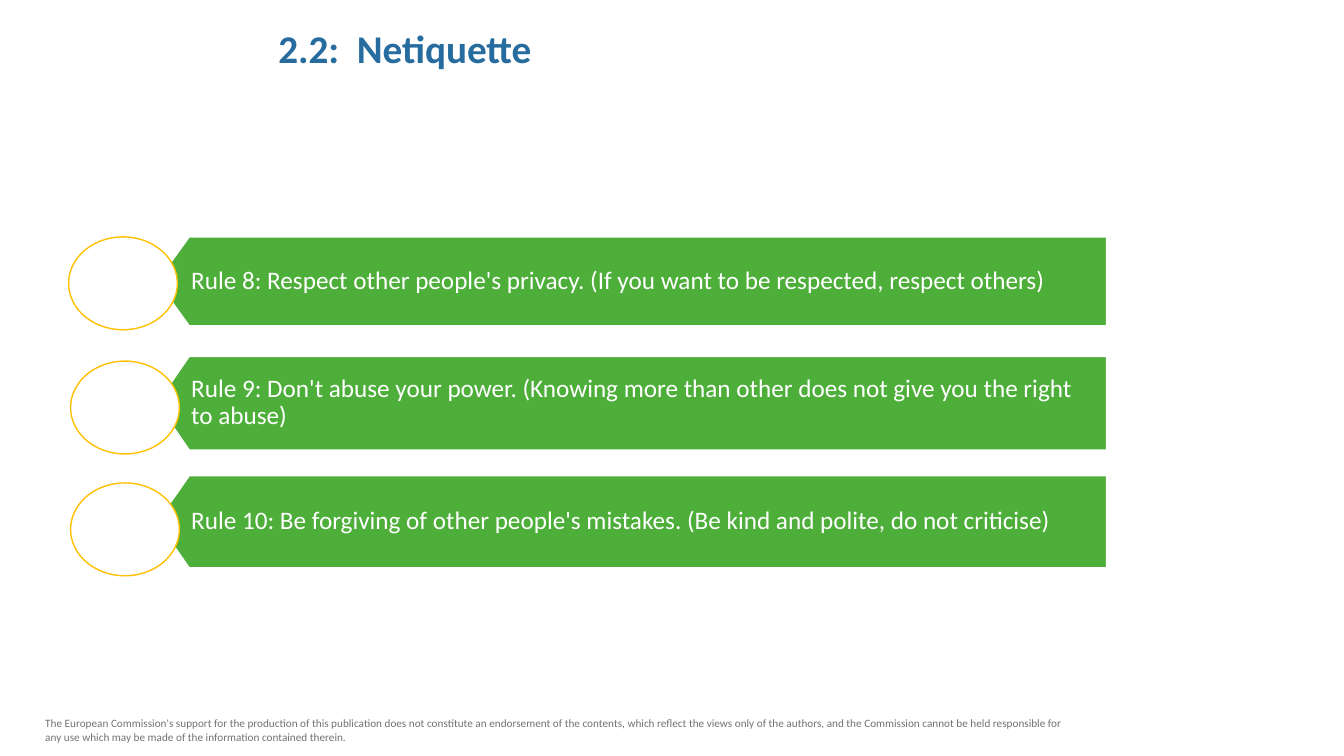
from dataclasses import dataclass

from lxml.etree import SubElement  # builds the autofit-free body settings
from pptx import Presentation
from pptx.dml.color import RGBColor
from pptx.enum.shapes import MSO_SHAPE as Preset
from pptx.enum.text import MSO_ANCHOR as Anchor, PP_ALIGN as Align
from pptx.util import Cm, Pt


@dataclass(frozen=True)
class Theme:
    font: str = "Calibri"
    heading: str = "266C9F"
    band: str = "4EAE3A"
    ring: str = "FFC000"
    light: str = "FFFFFF"
    muted: str = "767171"
    heading_size: float = 28
    rule_size: float = 18
    disclaimer_size: float = 8
    outline: float = 1


@dataclass(frozen=True)
class Box:
    """Place and size in centimetres."""
    left: float
    top: float
    width: float
    height: float

    def lengths(self):
        return [Cm(n) for n in (self.left, self.top, self.width, self.height)]


THEME = Theme()
HEADING = "2.2:  Netiquette"
DISCLAIMER = (
    "The European Commission's support for the production of this publication "
    "does not constitute an endorsement of the contents, which reflect the views "
    "only of the authors, and the Commission cannot be held responsible for any "
    "use which may be made of the information contained therein."
)
# Wording, band height, and ring offset (right, down) from the list's left edge
RULES = [
    ("Rule 8: Respect other people's privacy. "
     "(If you want to be respected, respect others)", 2.24, (0, 0)),
    ("Rule 9: Don't abuse your power. "
     "(Knowing more than other does not give you the right to abuse)", 2.36, (0.05, 0.12)),
    ("Rule 10: Be forgiving of other people's mistakes. "
     "(Be kind and polite, do not criticise)", 2.32, (0.05, 0.18)),
]
RULE_PITCH = 3.01
RING_WIDTH, RING_HEIGHT = 2.74, 2.34
BAND_INDENT = 2.23
POINT_DEPTH = 0.81


def apply(target, values):
    for name, value in values.items():
        setattr(target, name, value)


def write(shape, text, size, color, frame_format, paragraph_format, bold=False):
    frame = shape.text_frame
    frame.text = text
    apply(frame, {"word_wrap": True, **frame_format})
    paragraph = frame.paragraphs[0]
    apply(paragraph, {"space_before": Pt(0), **paragraph_format})
    font = paragraph.runs[0].font
    apply(font, {"name": THEME.font, "size": Pt(size), "bold": bold})
    font.color.rgb = RGBColor.from_string(color)


def paint(shape, fill, line):
    shape.shadow.inherit = False
    shape.fill.solid()
    shape.fill.fore_color.rgb = RGBColor.from_string(fill)
    shape.line.color.rgb = RGBColor.from_string(line)
    shape.line.width = Pt(THEME.outline)


def add_heading(slide, box):
    title = slide.shapes.title
    apply(title, dict(zip(("left", "top", "width", "height"), box.lengths())))
    write(title, HEADING, THEME.heading_size, THEME.heading,
          {"vertical_anchor": Anchor.TOP},
          {"alignment": Align.JUSTIFY, "line_spacing": 1.15, "space_after": Pt(10)},
          bold=True)


def add_band(slide, box, text):
    right, bottom = box.left + box.width, box.top + box.height
    shoulder = box.left + POINT_DEPTH
    corners = [(shoulder, bottom), (box.left, box.top + box.height / 2),
               (shoulder, box.top), (right, box.top)]
    outline = slide.shapes.build_freeform(Cm(right), Cm(bottom))
    outline.add_line_segments([(Cm(x), Cm(y)) for x, y in corners], close=True)
    band = outline.convert_to_shape()
    paint(band, THEME.band, THEME.light)
    write(band, text, THEME.rule_size, THEME.light,
          {"vertical_anchor": Anchor.MIDDLE, "margin_left": Cm(0.86),
           "margin_right": Cm(0.23), "margin_top": Cm(0.13), "margin_bottom": Cm(0.13)},
          {"alignment": Align.LEFT, "line_spacing": 0.9})


def add_rules(slide, box):
    for index, (text, height, (shift, drop)) in enumerate(RULES):
        top = box.top + index * RULE_PITCH
        add_band(slide, Box(box.left + BAND_INDENT, top, box.width - BAND_INDENT, height), text)
        ring_box = Box(box.left + shift, top + drop, RING_WIDTH, RING_HEIGHT)
        ring = slide.shapes.add_shape(Preset.OVAL, *ring_box.lengths())
        paint(ring, THEME.light, THEME.ring)


def add_disclaimer(slide, box):
    note = slide.shapes.add_textbox(*box.lengths())
    write(note, DISCLAIMER, THEME.disclaimer_size, THEME.muted,
          {"vertical_anchor": Anchor.TOP}, {"alignment": Align.LEFT})


def main():
    deck = Presentation()
    apply(deck, {"slide_width": Cm(33.87), "slide_height": Cm(19.05)})
    slide = deck.slides.add_slide(deck.slide_layouts[5])

    # Footer disclaimer, heading, then the list of rules
    add_disclaimer(slide, Box(0.89, 17.93, 26.57, 0.94))
    add_heading(slide, Box(6.76, 0.3, 10.19, 2))
    add_rules(slide, Box(1.73, 5.97, 26.16, 8.35))

    deck.save("out.pptx")


if __name__ == "__main__":
    main()
